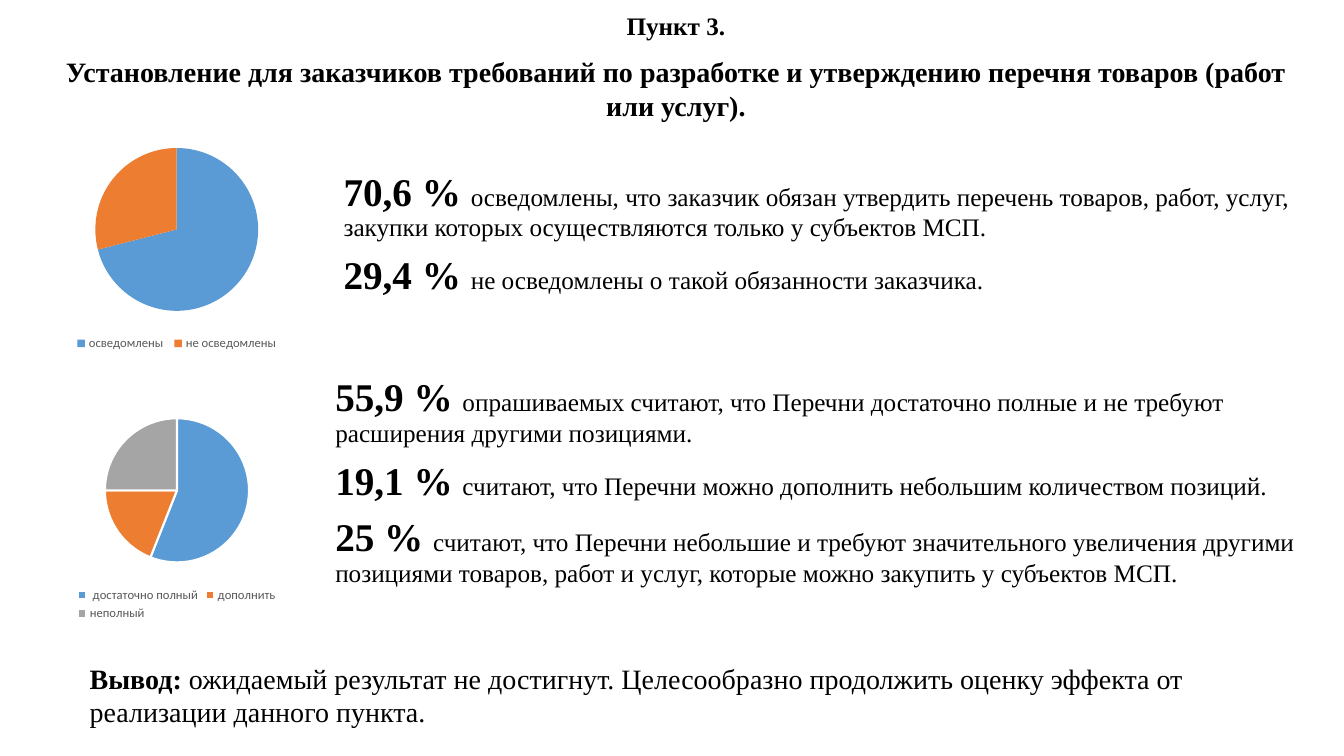
from pptx import Presentation
from pptx.chart.data import CategoryChartData
from pptx.dml.color import RGBColor
from pptx.enum.chart import XL_CHART_TYPE, XL_LEGEND_POSITION
from pptx.enum.text import PP_ALIGN
from pptx.util import Cm, Pt

PIE = XL_CHART_TYPE.PIE
LEGEND_BOTTOM = XL_LEGEND_POSITION.BOTTOM
CENTER = PP_ALIGN.CENTER

COLORS = {
    "text": "000000",
    "legend": "595959",
    "border": "FFFFFF",
    "blue": "5B9BD5",
    "orange": "ED7D31",
    "gray": "A5A5A5",
}
SLICES = ("blue", "orange", "gray")
TEXT_FONT = "Times New Roman"
CHART_FONT = "Calibri"


def color(name):
    """Return the palette colour with the given name."""
    return RGBColor.from_string(COLORS[name])


def add_text(slide, box, paragraphs, **spacing):
    """Fill a wrapped text box with paragraphs of (text, size, bold) runs."""
    text_frame = slide.shapes.add_textbox(*map(Cm, box)).text_frame
    text_frame.word_wrap = True
    for index, runs in enumerate(paragraphs):
        paragraph = text_frame.add_paragraph() if index else text_frame.paragraphs[0]
        for name, value in spacing.items():
            setattr(paragraph, name, value)
        for text, size, bold in runs:
            run = paragraph.add_run()
            run.text = text
            run.font.name = TEXT_FONT
            run.font.size = Pt(size)
            run.font.bold = bold
            run.font.color.rgb = color("text")
    return text_frame


def add_heading(slide, box, number, title):
    """Place the centred item number above its title."""
    text_frame = add_text(slide, box, [[(number, 18, True)], [(title, 20, True)]],
                          alignment=CENTER)
    first = text_frame.paragraphs[0]
    first.line_spacing = 1.15
    first.space_after = Pt(10)


def add_findings(slide, box, findings):
    """List survey findings, each led by a large bold percentage."""
    paragraphs = [[(share + " ", 28, True), (text, 18, False)] for share, text in findings]
    add_text(slide, box, paragraphs, line_spacing=0.9, space_before=Pt(10))


def add_pie(slide, box, answers, bordered):
    """Draw a pie of survey answers with a legend below."""
    data = CategoryChartData()
    data.categories = list(answers)
    data.add_series("Series 1", list(answers.values()))
    chart = slide.shapes.add_chart(PIE, *map(Cm, box), data).chart
    chart.has_title = False
    chart.font.name = CHART_FONT
    chart.font.size = Pt(10)
    chart.font.color.rgb = color("text")
    chart.has_legend = True
    legend = chart.legend
    legend.position = LEGEND_BOTTOM
    legend.include_in_layout = False
    legend.font.name = CHART_FONT
    legend.font.size = Pt(9)
    legend.font.color.rgb = color("legend")
    plot = chart.plots[0]
    plot.vary_by_categories = True
    for index, name in enumerate(SLICES[:len(answers)]):
        slice_format = plot.series[0].points[index].format
        slice_format.fill.solid()
        slice_format.fill.fore_color.rgb = color(name)
        if bordered:
            slice_format.line.color.rgb = color("border")
            slice_format.line.width = Pt(1.5)
        else:
            slice_format.line.fill.background()


def add_conclusion(slide, box, label, text):
    """Write the conclusion after its bold label."""
    add_text(slide, box, [[(label, 20, True), (text, 20, False)]])


def main():
    """Build the survey slide and save it."""
    presentation = Presentation()
    presentation.slide_width = Cm(33.87)
    presentation.slide_height = Cm(19.05)
    slide = presentation.slides.add_slide(presentation.slide_layouts[6])

    add_heading(
        slide, (1.4, 0.03, 31.27, 3.2), "Пункт 3.",
        "Установление для заказчиков требований по разработке и утверждению "
        "перечня товаров (работ или услуг).")

    add_pie(slide, (0.71, 3.38, 7.49, 5.56),
            {"осведомлены ": 71, "не осведомлены": 29}, bordered=False)
    add_findings(slide, (8.41, 4.22, 25.5, 5.38), [
        ("70,6 %", "осведомлены, что заказчик обязан утвердить перечень товаров, работ, "
                   "услуг, закупки которых осуществляются только у субъектов МСП."),
        ("29,4 %", "не осведомлены о такой обязанности заказчика."),
    ])

    add_pie(slide, (0.28, 10.19, 8.36, 5.56),
            {" достаточно полный": 56, "дополнить": 19, "неполный": 25}, bordered=True)
    add_findings(slide, (8.2, 9.4, 24.97, 6.73), [
        ("55,9 %", "опрашиваемых считают, что Перечни достаточно полные и не требуют "
                   "расширения другими позициями."),
        ("19,1 %", "считают, что Перечни можно дополнить небольшим количеством позиций."),
        ("25 %", "считают, что Перечни небольшие и требуют значительного увеличения "
                 "другими позициями товаров, работ и услуг, которые можно закупить "
                 "у субъектов МСП."),
    ])

    add_conclusion(
        slide, (2.01, 16.54, 29.54, 1.96), "Вывод:",
        " ожидаемый результат не достигнут. Целесообразно продолжить оценку эффекта "
        "от реализации данного пункта.")

    presentation.save("out.pptx")


if __name__ == "__main__":
    main()
